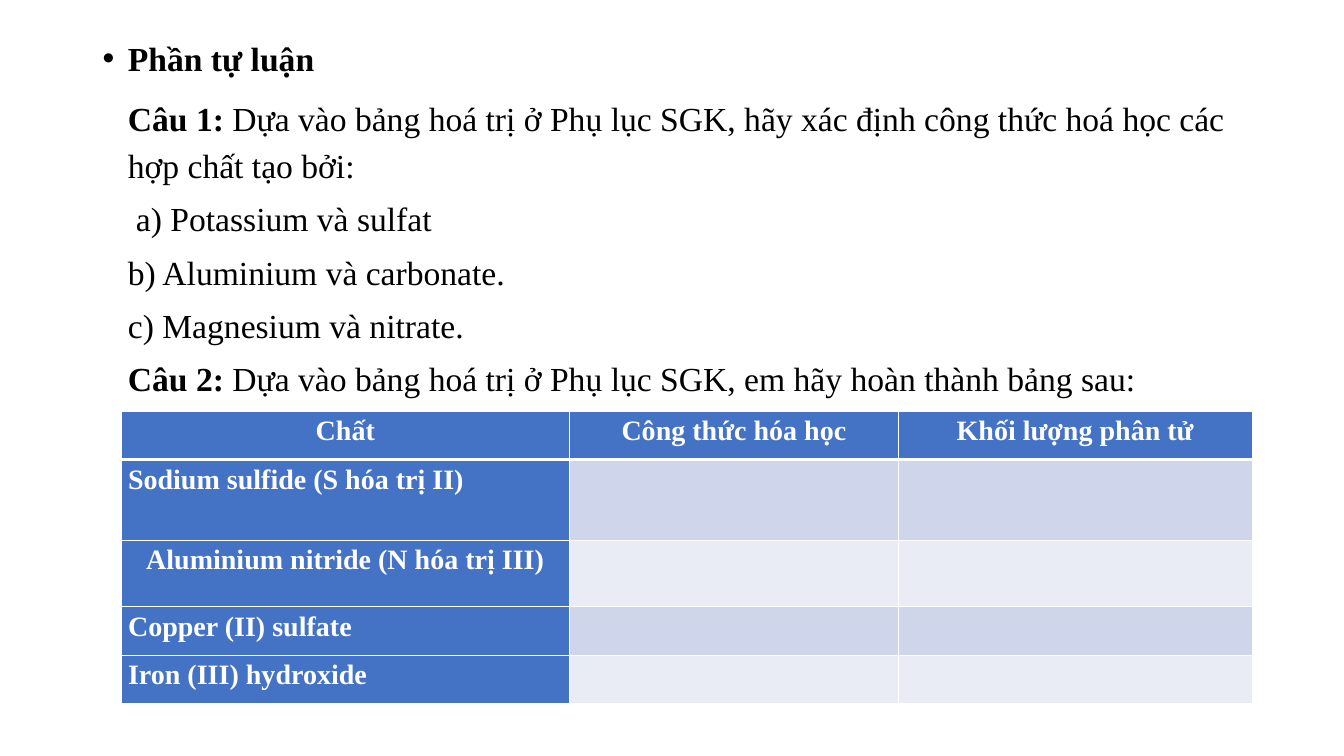
"""Build a chemistry exercise slide with questions and a table to complete."""
from dataclasses import dataclass

from lxml import etree
from pptx import Presentation
from pptx.dml.color import RGBColor
from pptx.enum.text import PP_ALIGN
from pptx.oxml.ns import qn
from pptx.util import Inches, Pt

LEFT, CENTER = PP_ALIGN.LEFT, PP_ALIGN.CENTER


@dataclass(frozen=True)
class Theme:
    font: str = "Times New Roman"
    body: int = 24
    cell: int = 20
    ink: str = "000000"
    white: str = "FFFFFF"
    accent: str = "4472C4"
    bands: tuple = ("CFD5EA", "E9EBF5")


THEME = Theme()
SLIDE_W, SLIDE_H = 13.33, 7.5
HEADING = "Phần tự luận"
QUESTIONS = [
    ("Câu 1: ", "Dựa vào bảng hoá trị ở Phụ lục SGK, hãy xác định công thức "
     "hoá học các hợp chất tạo bởi:", 0.25),
    ("", "a) Potassium và sulfat", 0.33),
    ("", "b) Aluminium và carbonate.", 0.25),
    ("", "c) Magnesium và nitrate.", 0.25),
    ("Câu 2: ", "Dựa vào bảng hoá trị ở Phụ lục SGK, em hãy hoàn thành bảng sau:", 0.25),
]
HEADERS = ["Chất", "Công thức hóa học", "Khối lượng phân tử"]
SUBSTANCES = [
    ("Sodium sulfide (S hóa trị II)", LEFT),
    ("Aluminium nitride (N hóa trị III)", CENTER),
    ("Copper (II) sulfate", LEFT),
    ("Iron (III) hydroxide", LEFT),
]
COLS = [4.45, 3.26, 3.51]
ROWS = [0.48, 0.8, 0.66, 0.48, 0.48]
BODY_BOX = (0.92, 0.3, 11.5, 2.91)
TABLE_AT = (1.2, 4.08)


def add_run(p, text, size, color, bold):
    r = p.add_run()
    r.text = text
    r.font.name, r.font.size, r.font.bold = THEME.font, Pt(size), bold
    r.font.color.rgb = RGBColor.from_string(color)


def set_spacing(p, line=1.15, before=2, after=3):
    p.line_spacing = line
    p.space_before, p.space_after = Pt(before), Pt(after)


def set_indent(p, margin, first=0):
    pPr = p._p.get_or_add_pPr()
    pPr.set("marL", str(Inches(margin)))
    pPr.set("indent", str(Inches(first)))
    return pPr


def add_questions(s):
    tf = s.shapes.add_textbox(*map(Inches, BODY_BOX)).text_frame
    tf.word_wrap = True
    p = tf.paragraphs[0]
    set_spacing(p, 1.07, 10, 8)
    pPr = set_indent(p, 0.25, -0.25)
    etree.SubElement(pPr, qn("a:buFont"), typeface="Arial")
    etree.SubElement(pPr, qn("a:buChar"), char="•")
    add_run(p, HEADING, THEME.body, THEME.ink, True)
    for label, text, margin in QUESTIONS:
        p = tf.add_paragraph()
        set_spacing(p)
        set_indent(p, margin)
        if label:
            add_run(p, label, THEME.body, THEME.ink, True)
        add_run(p, text, THEME.body, THEME.ink, False)


def set_borders(cell, top, bottom):
    tcPr = cell._tc.get_or_add_tcPr()
    widths = {"a:lnL": 1, "a:lnR": 1, "a:lnT": top, "a:lnB": bottom}
    for tag, width in widths.items():
        ln = etree.SubElement(tcPr, qn(tag), w=str(Pt(width)))
        fill = etree.SubElement(ln, qn("a:solidFill"))
        etree.SubElement(fill, qn("a:srgbClr"), val=THEME.white)


def add_substance_table(s):
    size = sum(COLS), sum(ROWS)
    frame = s.shapes.add_table(len(ROWS), len(COLS), *map(Inches, TABLE_AT + size))
    table = frame.table
    for col, width in zip(table.columns, COLS):
        col.width = Inches(width)
    for row, height in zip(table.rows, ROWS):
        row.height = Inches(height)
    grid = [[(text, CENTER) for text in HEADERS]]
    grid += [[substance, ("", LEFT), ("", LEFT)] for substance in SUBSTANCES]
    for i, row in enumerate(grid):
        for j, (text, align) in enumerate(row):
            cell = table.cell(i, j)
            cell.margin_left = cell.margin_right = Inches(0.07)
            cell.margin_top = cell.margin_bottom = 0
            set_borders(cell, 3 if i == 1 else 1, 3 if i == 0 else 1)
            color = THEME.accent if i == 0 or j == 0 else THEME.bands[(i - 1) % 2]
            cell.fill.solid()
            cell.fill.fore_color.rgb = RGBColor.from_string(color)
            if text:
                p = cell.text_frame.paragraphs[0]
                p.alignment = align
                set_spacing(p)
                add_run(p, text, THEME.cell, THEME.white, True)


def main():
    prs = Presentation()
    prs.slide_width, prs.slide_height = Inches(SLIDE_W), Inches(SLIDE_H)
    s = prs.slides.add_slide(prs.slide_layouts[6])
    add_questions(s)
    add_substance_table(s)
    prs.save("out.pptx")


if __name__ == "__main__":
    main()
